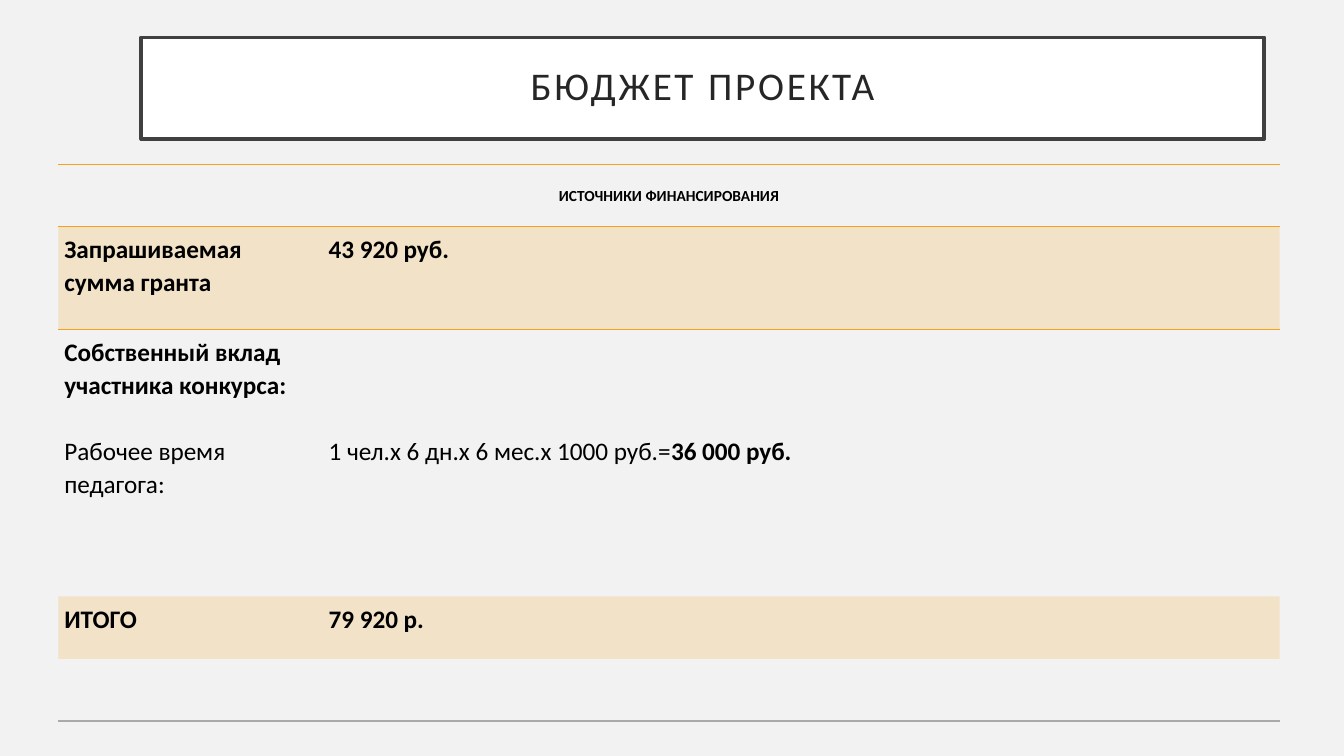
from dataclasses import dataclass

from lxml.etree import SubElement
from pptx import Presentation
from pptx.dml.color import RGBColor
from pptx.enum.shapes import MSO_SHAPE
from pptx.enum.text import MSO_ANCHOR, PP_ALIGN
from pptx.oxml.ns import qn
from pptx.slide import Slide
from pptx.table import Table, _Cell
from pptx.text.text import TextFrame, _Paragraph
from pptx.util import Cm, Pt

FONT = "Calibri"
ACCENT = "F6A21D"
GREY = "AAAAAA"
NO_STYLE = "{2D5ABB26-0587-4C30-8999-92F81FD0307C}"
COLUMN_WIDTHS = (6.66, 24.12)
ROW_HEIGHTS = (1.57, 2.59, 6.73, 1.57, 1.57)
CELL_MARGIN = 0.15
BODY_LINE = 23.5


@dataclass(frozen=True)
class Words:
    text: str
    bold: bool = False


@dataclass(frozen=True)
class Line:
    words: tuple[Words, ...]
    space_before: float = 0


@dataclass(frozen=True)
class BudgetCell:
    row: int
    column: int
    lines: tuple[Line, ...] = ()
    shaded: bool = False
    top_margin: float = CELL_MARGIN


def bold_line(text: str) -> tuple[Line, ...]:
    return (Line((Words(text, True),)),)


BUDGET_CELLS = (
    BudgetCell(1, 0, bold_line("Запрашиваемая сумма гранта"), True),
    BudgetCell(1, 1, bold_line("43 920 руб."), True),
    BudgetCell(2, 0, bold_line("Собственный вклад участника конкурса:")
               + (Line((Words("Рабочее время педагога:"),), BODY_LINE),)),
    BudgetCell(2, 1, (Line((Words("1 чел.х 6 дн.х 6 мес.х 1000 руб.="),
                            Words("36 000 руб.", True))),),
               top_margin=CELL_MARGIN + Pt(3 * BODY_LINE).cm),
    BudgetCell(3, 0, bold_line("ИТОГО"), True),
    BudgetCell(3, 1, bold_line("79 920 р."), True),
    BudgetCell(4, 0),
    BudgetCell(4, 1),
)


def color(value: str) -> RGBColor:
    return RGBColor.from_string(value)


def add_words(paragraph: _Paragraph, words: Words, size: float, ink: str = "000000"):
    run = paragraph.add_run()
    run.text = words.text
    run.font.name = FONT
    run.font.size = Pt(size)
    run.font.bold = words.bold
    run.font.color.rgb = color(ink)
    return run


def write_lines(frame: TextFrame, lines: tuple[Line, ...], size: float,
                alignment: PP_ALIGN = PP_ALIGN.LEFT) -> None:
    for index, line in enumerate(lines):
        paragraph = frame.add_paragraph() if index else frame.paragraphs[0]
        paragraph.alignment = alignment
        paragraph.line_spacing = 1.07
        if line.space_before:
            paragraph.space_before = Pt(line.space_before)
        for words in line.words:
            add_words(paragraph, words, size)


def set_margins(cell: _Cell, top: float = CELL_MARGIN) -> None:
    cell.margin_left = cell.margin_right = cell.margin_bottom = Cm(CELL_MARGIN)
    cell.margin_top = Cm(top)


def add_border(cell: _Cell, side: str, value: str) -> None:
    border = SubElement(cell._tc.get_or_add_tcPr(), qn(f"a:ln{side}"), w=str(Pt(1)))
    fill = SubElement(border, qn("a:solidFill"))
    SubElement(fill, qn("a:srgbClr"), val=value)


def shade(cell: _Cell) -> None:
    cell.fill.solid()
    cell.fill.fore_color.rgb = color(ACCENT)
    tint = cell._tc.tcPr.find(f"{qn('a:solidFill')}/{qn('a:srgbClr')}")
    SubElement(tint, qn("a:alpha"), val="20000")


def add_title(slide: Slide) -> None:
    title = slide.shapes.add_shape(MSO_SHAPE.RECTANGLE, Cm(3.56), Cm(0.94), Cm(28.3), Cm(2.57))
    title.shadow.inherit = False
    title.fill.solid()
    title.fill.fore_color.rgb = color("FFFFFF")
    title.line.color.rgb = color("404040")
    title.line.width = Pt(2.5)
    frame = title.text_frame
    frame.word_wrap = True
    frame.vertical_anchor = MSO_ANCHOR.MIDDLE
    frame.margin_left = frame.margin_right = frame.margin_top = frame.margin_bottom = Cm(0.5)
    paragraph = frame.paragraphs[0]
    paragraph.alignment = PP_ALIGN.CENTER
    paragraph.line_spacing = 0.9
    run = add_words(paragraph, Words("БЮДЖЕТ ПРОЕКТА"), 28, "262626")
    run.font._element.set("spc", "200")


def fill_header(table: Table) -> None:
    header = table.cell(0, 0)
    header.merge(table.cell(0, 1))
    header.vertical_anchor = MSO_ANCHOR.MIDDLE
    set_margins(header)
    write_lines(header.text_frame, bold_line("ИСТОЧНИКИ ФИНАНСИРОВАНИЯ"), 11, PP_ALIGN.CENTER)
    for cell in table.rows[0].cells:
        add_border(cell, "T", ACCENT)
        add_border(cell, "B", ACCENT)
        cell.fill.background()


def fill_cell(table: Table, item: BudgetCell) -> None:
    cell = table.cell(item.row, item.column)
    set_margins(cell, item.top_margin)
    write_lines(cell.text_frame, item.lines, 18)
    if item.row == 1:
        add_border(cell, "T", ACCENT)
    if item.row == len(ROW_HEIGHTS) - 1:
        add_border(cell, "B", GREY)
    if item.shaded:
        shade(cell)
    else:
        cell.fill.background()


def add_budget(slide: Slide) -> None:
    frame = slide.shapes.add_table(len(ROW_HEIGHTS), len(COLUMN_WIDTHS), Cm(1.47), Cm(4.14),
                                   Cm(sum(COLUMN_WIDTHS)), Cm(sum(ROW_HEIGHTS)))
    table = frame.table
    table.first_row = table.horz_banding = False
    table._tbl.tblPr.find(qn("a:tableStyleId")).text = NO_STYLE
    for column, width in zip(table.columns, COLUMN_WIDTHS):
        column.width = Cm(width)
    for row, height in zip(table.rows, ROW_HEIGHTS):
        row.height = Cm(height)
    fill_header(table)
    for item in BUDGET_CELLS:
        fill_cell(table, item)


def main() -> None:
    presentation = Presentation()
    presentation.slide_width = Cm(33.87)
    presentation.slide_height = Cm(19.05)
    slide = presentation.slides.add_slide(presentation.slide_layouts[6])
    slide.background.fill.solid()
    slide.background.fill.fore_color.rgb = color("F2F2F2")
    add_title(slide)
    add_budget(slide)
    presentation.save("out.pptx")


if __name__ == "__main__":
    main()
